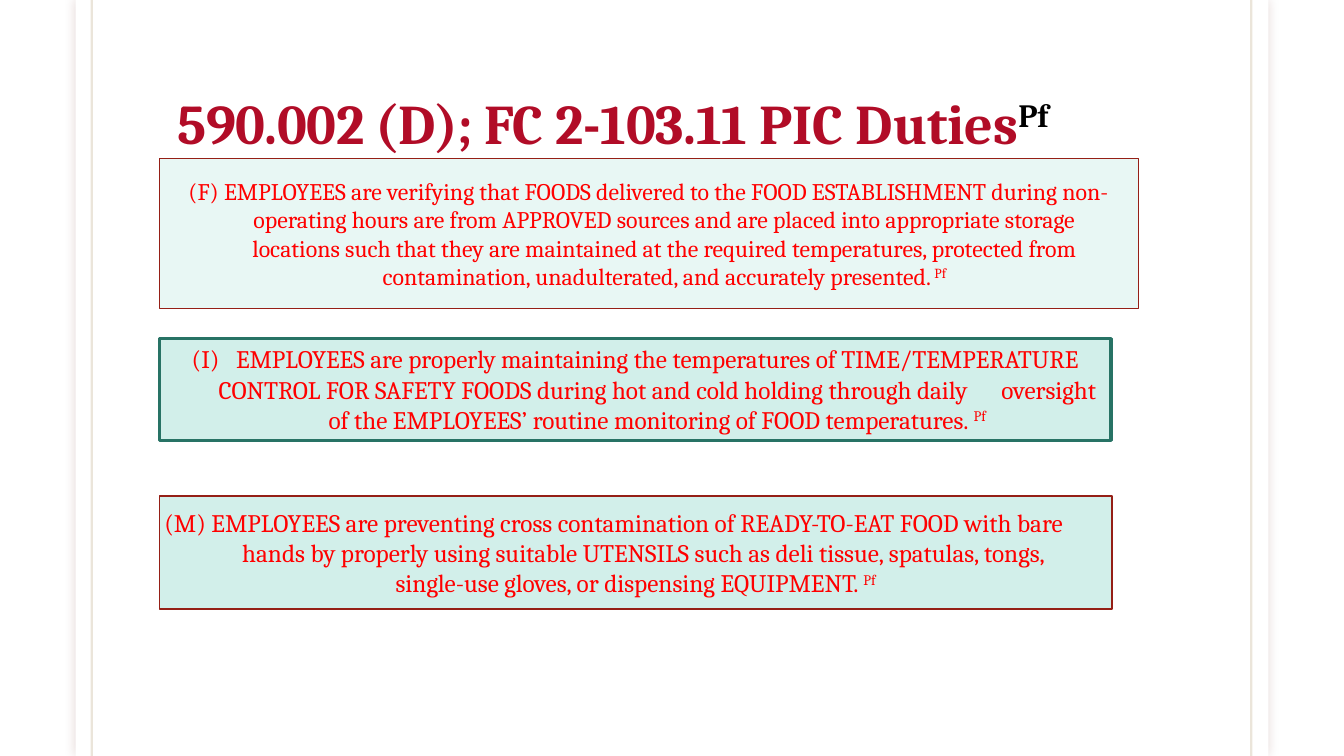
from lxml import etree
from pptx import Presentation
from pptx.dml.color import RGBColor
from pptx.enum.shapes import MSO_CONNECTOR, MSO_SHAPE
from pptx.enum.text import MSO_ANCHOR, MSO_AUTO_SIZE, PP_ALIGN
from pptx.oxml.ns import qn
from pptx.util import Inches, Pt

RECT, LINE = MSO_SHAPE.RECTANGLE, MSO_CONNECTOR.STRAIGHT
LEFT, CENTER = PP_ALIGN.LEFT, PP_ALIGN.CENTER
TOP, MIDDLE, BOTTOM = MSO_ANCHOR.TOP, MSO_ANCHOR.MIDDLE, MSO_ANCHOR.BOTTOM


class Theme:
    font = "Cambria"
    head, small, body = Pt(40), Pt(17), Pt(18)
    white = RGBColor.from_string("FFFFFF")
    black = RGBColor.from_string("000000")
    title = RGBColor.from_string("B10C27")
    text = RGBColor.from_string("FF0000")
    mint = RGBColor.from_string("A5E0D4")
    pale = RGBColor.from_string("D2EFEA")
    brown = RGBColor.from_string("951F16")
    green = RGBColor.from_string("287365")
    rule = RGBColor.from_string("79540B")
    glow = "65150F"


def add_run(par, text, size, color, space=0):
    """Add a run; "Pf" is raised, and space is extra tracking in points."""
    run = par.add_run()
    run.text = text
    font = run.font
    font.name, font.size, font.color.rgb = Theme.font, size, color
    props = font._element
    if text.strip() == "Pf":
        props.set("baseline", "30000")
    if space:
        props.set("spc", str(round(space * 100)))
    return run


def set_alpha(fill, share):
    """Make a solid fill see-through; share is opacity in percent."""
    color = fill._xPr.find(qn("a:solidFill"))[0]
    etree.SubElement(color, qn("a:alpha")).set("val", str(share * 1000))


prs = Presentation()
prs.slide_width, prs.slide_height = Inches(13.33), Inches(7.5)
slide = prs.slides.add_slide(prs.slide_layouts[5])
shapes = slide.shapes

# Page panel with its soft shadow and side rules
panel = shapes.add_shape(RECT, Inches(0.75), 0, Inches(11.83), Inches(7.5))
panel.shadow.inherit = False
panel.fill.solid()
panel.fill.fore_color.rgb = Theme.white
panel.line.fill.background()
effects = panel._element.spPr.find(qn("a:effectLst"))
shade = etree.SubElement(effects, qn("a:outerShdw"), blurRad=str(Pt(7)), dist="0", dir="0")
tint = etree.SubElement(shade, qn("a:srgbClr"), val=Theme.glow)
etree.SubElement(tint, qn("a:alpha"), val="15000")

for x in (0.91, 12.41):
    rule = shapes.add_connector(LINE, Inches(x), 0, Inches(x), Inches(7.5))
    rule.line.color.rgb = Theme.rule
    rule.line.width = Pt(1.5)
    set_alpha(rule.line.fill, 15)
    etree.SubElement(rule._element.spPr, qn("a:effectLst"))

# Title, brought in front of the panel
title = shapes.title
panel._element.getparent().append(title._element)
title.left, title.top = Inches(1.66), Inches(0.35)
title.width, title.height = Inches(10), Inches(1.25)
frame = title.text_frame
frame.word_wrap = True
frame.auto_size = MSO_AUTO_SIZE.NONE
frame.vertical_anchor = BOTTOM
par = frame.paragraphs[0]
par.alignment, par.line_spacing = LEFT, 0.85
for text, color, space in (
    ("590.002 (D); FC ", Theme.title, -0.3),
    ("2-103.11 ", Theme.title, -0.2),
    ("PIC Duties", Theme.title, 0),
    ("Pf", Theme.black, 0),
):
    add_run(par, text, Theme.head, color, space).font.bold = True

# Paragraphs: alignment, left margin, first-line indent, runs (text, tracking)
duty_f = [
    (CENTER, 0, 0, [("(F) EMPLOYEES are verifying that FOODS delivered to the FOOD ESTABLISHMENT during non-", 0)]),
    (CENTER, 0.31, 0, [("operating hours are from APPROVED sources and are placed into appropriate storage", 0)]),
    (CENTER, 0.31, 0, [("locations such that they are maintained at the required temperatures, protected from", 0)]),
    (CENTER, 0.31, 0, [("contamination, unadulterated, and accurately presented.", 0), (" Pf", 0)]),
]
duty_i = [
    (CENTER, 0.44, -0.44, [
        ("EMPLOYEES are properly maintaining the temperatures of TIME/TEMPERATURE "
         "CONTROL FOR SAFETY FOODS during hot and cold holding through daily", 0),
        (" ", 20),
        ("oversight of the EMPLOYEES’ routine monitoring of FOOD temperatures. ", 0),
        ("Pf", 0),
    ]),
]
duty_m = [
    (LEFT, 0, 0, [("(M) EMPLOYEES are preventing cross contamination of READY-TO-EAT FOOD with bare", 0)]),
    (CENTER, 0, 0.16, [("hands by properly using suitable UTENSILS such as deli tissue, spatulas, tongs,", 0)]),
    (CENTER, 0, 0, [("single-use gloves, or dispensing EQUIPMENT. ", 0), ("Pf", 0)]),
]

# Boxes: top, width, height, fill, opacity, line, weight, type size, anchor, insets, text
boxes = [
    (1.57, 9.71, 1.49, Theme.mint, 25, Theme.brown, 1, Theme.small, MIDDLE, (0.05, 0.02), duty_f),
    (3.36, 9.44, 1.01, Theme.pale, 100, Theme.green, 2.25, Theme.body, TOP, (0.1, 0.05), duty_i),
    (4.92, 9.45, 1.12, Theme.pale, 100, Theme.brown, 1, Theme.body, MIDDLE, (0.05, 0.02), duty_m),
]
for top, width, height, fill, share, edge, weight, size, anchor, inset, pars in boxes:
    box = shapes.add_shape(RECT, Inches(1.58), Inches(top), Inches(width), Inches(height))
    box.shadow.inherit = False
    box.fill.solid()
    box.fill.fore_color.rgb = fill
    if share < 100:
        set_alpha(box.fill, share)
    box.line.color.rgb = edge
    box.line.width = Pt(weight)
    frame = box.text_frame
    frame.word_wrap = True
    frame.vertical_anchor = anchor
    frame.margin_left = frame.margin_right = Inches(inset[0])
    frame.margin_top = frame.margin_bottom = Inches(inset[1])
    for n, (align, margin, indent, runs) in enumerate(pars):
        par = frame.add_paragraph() if n else frame.paragraphs[0]
        par.alignment = align
        props = par._p.get_or_add_pPr()
        props.set("marL", str(Inches(margin)))
        props.set("indent", str(Inches(indent)))
        if indent < 0:
            etree.SubElement(props, qn("a:buAutoNum"), type="romanUcParenBoth")
        for text, space in runs:
            add_run(par, text, size, Theme.text, space)

prs.save("out.pptx")
